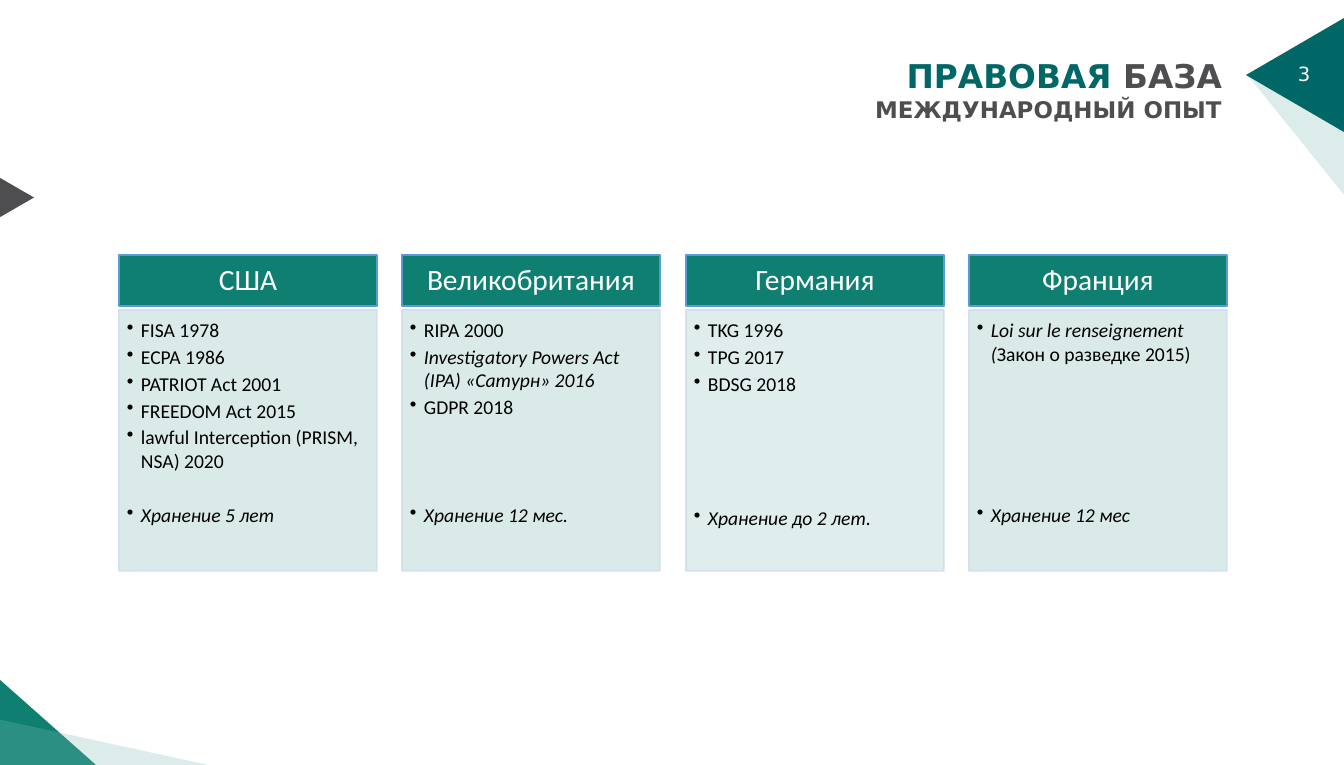
from dataclasses import dataclass

from lxml import etree
from pptx import Presentation
from pptx import util as u
from pptx.dml.color import RGBColor
from pptx.enum import shapes, text
from pptx.oxml.ns import qn

SLIDE_NUMBER = "3"
TITLE = [("ПРАВОВАЯ ", "accent"), ("БАЗА", "dark")]
SUBTITLE = "МЕЖДУНАРОДНЫЙ ОПЫТ"

# country, laws as (italic part, upright part), storage term, lines left free above it, fill
COUNTRIES = [
    ("США",
     [("", "FISA 1978"), ("", "ECPA 1986"), ("", "PATRIOT Act 2001"),
      ("", "FREEDOM Act 2015"), ("", "lawful Interception (PRISM, NSA) 2020")],
     "Хранение 5 лет", 1, "card"),
    ("Великобритания",
     [("", "RIPA 2000"), ("Investigatory Powers Act (IPA) «Сатурн» 2016", ""),
      ("", "GDPR 2018")],
     "Хранение 12 мес.", 3, "card"),
    ("Германия",
     [("", "TKG 1996"), ("", "TPG 2017"), ("", "BDSG 2018")],
     "Хранение до 2 лет.", 4, "card_light"),
    ("Франция",
     [("Loi sur le renseignement (", "Закон о разведке 2015)")],
     "Хранение 12 мес", 5, "card"),
]

# frame before rotation, rotation, apex position, flipped, colour, opacity in %
TRIANGLES = [
    ((1216, 77, 202, 141), 270, 0.865, False, "pale", 27),
    ((1238, 26, 114, 98), 270, 0.5, False, "accent", 100),
    ((-1, 679, 97, 86), 0, 0, False, "header", 100),
    ((-8, 178, 45, 39), 90, 0.5, False, "dark", 100),
    ((82, 637, 46, 211), 270, 0, True, "pale", 27),
]


@dataclass(frozen=True)
class Theme:
    accent: str = "006666"
    dark: str = "4E4D50"
    pale: str = "7FBCB7"
    header: str = "0E7F70"
    header_line: str = "5B9BD5"
    card: str = "D6E8E7"
    card_light: str = "DCEDEC"
    card_line: str = "D2DEEF"
    white: str = "FFFFFF"
    black: str = "000000"
    title_font: str = "DejaVu Sans"
    body_font: str = "Calibri"
    title_size: int = 20
    subtitle_size: int = 14
    header_size: int = 18
    body_size: int = 12
    line_pitch: float = 16.5


THEME = Theme()
PX = 914400 / 117.7
SLIDE_SIZE = (1344, 765)
NUMBER_BOX = (1286, 56, 68, 44)
TITLE_BOX = (340, 47, 884, 85)
CARDS_LEFT, CARDS_SPAN, CARD_WIDTH = 119, 850, 258
HEADER_TOP, HEADER_HEIGHT = 255, 51
BODY_TOP, BODY_HEIGHT = 310, 261
BULLET_INDENT = 14


def px(length):
    return u.Emu(round(length * PX))


def colour(name):
    return RGBColor.from_string(getattr(THEME, name))


def add_filled(slide, preset, box, fill, line=None, opacity=100):
    shape = slide.shapes.add_shape(preset, *map(px, box))
    shape.shadow.inherit = False
    shape.fill.solid()
    shape.fill.fore_color.rgb = colour(fill)
    if line:
        shape.line.color.rgb = colour(line)
        shape.line.width = u.Pt(1)
    else:
        shape.line.fill.background()
    if opacity < 100:
        for element in shape._element.spPr.iter(qn("a:srgbClr")):
            etree.SubElement(element, qn("a:alpha")).set("val", str(opacity * 1000))
    return shape


def set_frame(shape, insets, anchor):
    """Wrap the text and set left, top, right and bottom insets."""
    frame = shape.text_frame
    frame.word_wrap = True
    frame.vertical_anchor = anchor
    (frame.margin_left, frame.margin_top,
     frame.margin_right, frame.margin_bottom) = map(px, insets)
    return frame


def set_font(paragraph, name, size, colour_name, bold=None):
    font = paragraph.font
    font.name, font.size, font.bold = name, u.Pt(size), bold
    font.color.rgb = colour(colour_name)


def add_triangle(slide, box, rotation, apex, flipped, fill, opacity):
    shape = add_filled(slide, shapes.MSO_SHAPE.ISOSCELES_TRIANGLE, box, fill, opacity=opacity)
    shape.adjustments[0] = apex
    shape.rotation = rotation
    if flipped:
        shape._element.spPr.find(qn("a:xfrm")).set("flipV", "1")


def add_number(slide):
    box = slide.shapes.add_textbox(*map(px, NUMBER_BOX))
    paragraph = set_frame(box, (12, 6, 12, 6), text.MSO_ANCHOR.TOP).paragraphs[0]
    paragraph.text = SLIDE_NUMBER
    set_font(paragraph, THEME.title_font, THEME.body_size, "white")


def add_title(slide):
    box = slide.shapes.add_textbox(*map(px, TITLE_BOX))
    frame = set_frame(box, (2, 2, 2, 2), text.MSO_ANCHOR.MIDDLE)
    title, subtitle = frame.paragraphs[0], frame.add_paragraph()
    for words, colour_name in TITLE:
        run = title.add_run()
        run.text = words
        run.font.color.rgb = colour(colour_name)
    subtitle.text = SUBTITLE
    for paragraph, size in ((title, THEME.title_size), (subtitle, THEME.subtitle_size)):
        paragraph.alignment = text.PP_ALIGN.RIGHT
        set_font(paragraph, THEME.title_font, size, "dark", bold=True)


def add_bullet(paragraph):
    properties = paragraph._p.get_or_add_pPr()
    properties.set("marL", str(px(BULLET_INDENT)))
    properties.set("indent", str(-px(BULLET_INDENT)))
    etree.SubElement(properties, qn("a:buChar")).set("char", "•")


def add_country(slide, left, country, laws, storage, free_lines, fill):
    rectangle = shapes.MSO_SHAPE.RECTANGLE
    header = add_filled(slide, rectangle, (left, HEADER_TOP, CARD_WIDTH, HEADER_HEIGHT),
                        "header", "header_line")
    heading = set_frame(header, (16, 9, 16, 9), text.MSO_ANCHOR.MIDDLE).paragraphs[0]
    heading.text = country
    heading.alignment = text.PP_ALIGN.CENTER
    heading.line_spacing = 0.9
    set_font(heading, THEME.body_font, THEME.header_size, "white")

    body = add_filled(slide, rectangle, (left, BODY_TOP, CARD_WIDTH, BODY_HEIGHT),
                      fill, "card_line", opacity=90)
    frame = set_frame(body, (8, 8, 11, 12), text.MSO_ANCHOR.TOP)
    for index, parts in enumerate(laws + [(storage, "")]):
        paragraph = frame.add_paragraph() if index else frame.paragraphs[0]
        paragraph.alignment = text.PP_ALIGN.LEFT
        paragraph.space_after = u.Pt(2)
        if index == len(laws):
            paragraph.space_before = u.Pt(free_lines * THEME.line_pitch)
        add_bullet(paragraph)
        set_font(paragraph, THEME.body_font, THEME.body_size, "black")
        for words, italic in zip(parts, (True, False)):
            if words:
                run = paragraph.add_run()
                run.text = words
                run.font.italic = italic


def main():
    presentation = Presentation()
    presentation.slide_width, presentation.slide_height = map(px, SLIDE_SIZE)
    slide = presentation.slides.add_slide(presentation.slide_layouts[6])
    for triangle in TRIANGLES:
        add_triangle(slide, *triangle)
    add_number(slide)
    for column, country in enumerate(COUNTRIES):
        left = CARDS_LEFT + round(column * CARDS_SPAN / (len(COUNTRIES) - 1))
        add_country(slide, left, *country)
    add_title(slide)
    presentation.save("out.pptx")


if __name__ == "__main__":
    main()
